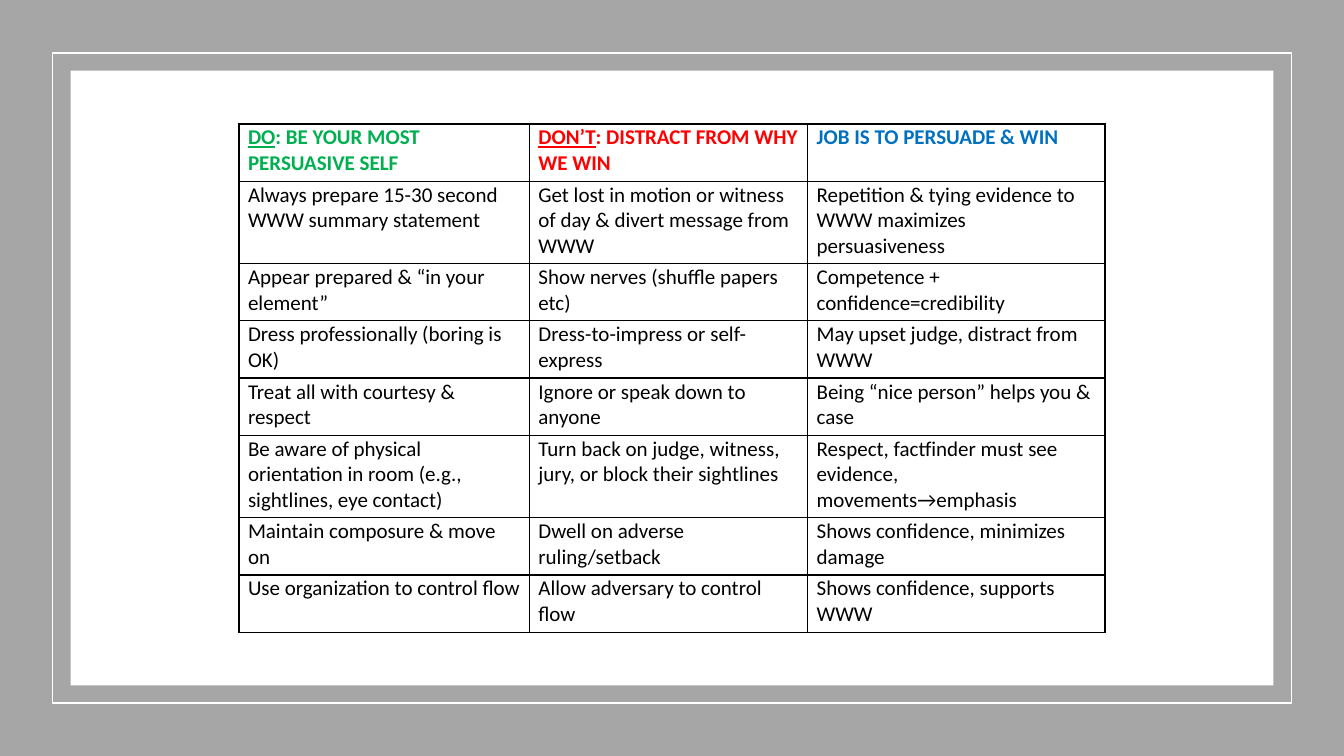
from pptx import Presentation, util as u
from pptx.dml.color import RGBColor
from pptx.enum import shapes, text
from pptx.oxml import parse_xml
from pptx.oxml.ns import nsdecls

W, H = 13.33, 7.5
deck = Presentation()
deck.slide_width, deck.slide_height = u.Inches(W), u.Inches(H)
slide = deck.slides.add_slide(deck.slide_layouts[6])


def paint(part, tone):
    part.solid()
    part.fore_color.rgb = RGBColor.from_string(tone)


def write(para, words, tone="000000", bold=False, under=False):
    run = para.add_run()
    run.text = words
    font = run.font
    font.name, font.size = "Calibri", u.Pt(15)
    font.bold, font.underline = bold, under
    paint(font.fill, tone)


frames = [(0, 0, "A6A6A6", None), (0.52, 0.525, None, "FFFFFF"), (0.7, 0.7, "FFFFFF", None)]
for x, y, fill, line in frames:
    box = slide.shapes.add_shape(
        shapes.MSO_SHAPE.RECTANGLE, u.Inches(x), u.Inches(y),
        u.Inches(W - 2 * x), u.Inches(H - 2 * y))
    box.shadow.inherit = False
    for part, tone in ((box.fill, fill), (box.line.fill, line)):
        if tone:
            paint(part, tone)
        else:
            part.background()
    if line:
        box.line.width = u.Pt(1)

heads = [
    ("DO", ": BE YOUR MOST PERSUASIVE SELF", "00B050"),
    ("DON’T", ": DISTRACT FROM WHY WE WIN", "FF0000"),
    ("", "JOB IS TO PERSUADE & WIN", "0070C0"),
]
tips = [
    ("Always prepare 15-30 second WWW summary statement",
     "Get lost in motion or witness of day & divert message from WWW",
     "Repetition & tying evidence to WWW maximizes persuasiveness"),
    ("Appear prepared & “in your element”",
     "Show nerves (shuffle papers etc)",
     "Competence + confidence=credibility"),
    ("Dress professionally (boring is OK)",
     "Dress-to-impress or self-express",
     "May upset judge, distract from WWW"),
    ("Treat all with courtesy & respect",
     "Ignore or speak down to anyone",
     "Being “nice person” helps you & case"),
    ("Be aware of physical orientation in room (e.g., sightlines, eye contact)",
     "Turn back on judge, witness, jury, or block their sightlines",
     "Respect, factfinder must see evidence, movements→emphasis"),
    ("Maintain composure & move on",
     "Dwell on adverse ruling/setback",
     "Shows confidence, minimizes damage"),
    ("Use organization to control flow",
     "Allow adversary to control flow",
     "Shows confidence, supports WWW"),
]
cols = [2.88, 2.76, 2.95]
short, tall = 0.567, 0.82
rows = [tall if r in (1, 5) else short for r in range(len(tips) + 1)]

grid = slide.shapes.add_table(
    len(rows), len(cols), u.Inches((W - sum(cols)) / 2), u.Inches(1.23),
    u.Inches(sum(cols)), u.Inches(sum(rows))).table
grid.first_row = grid.horz_banding = False
for col, wide in zip(grid.columns, cols):
    col.width = u.Inches(wide)

for r, high in enumerate(rows):
    grid.rows[r].height = u.Inches(high)
    for c in range(len(cols)):
        cell = grid.cell(r, c)
        paint(cell.fill, "FFFFFF")
        cell.margin_left = cell.margin_right = u.Inches(0.09)
        cell.margin_top, cell.margin_bottom = u.Inches(0.01), 0
        cell.vertical_anchor = text.MSO_ANCHOR.TOP
        para = cell.text_frame.paragraphs[0]
        if r:
            write(para, tips[r - 1][c])
        else:
            lead, rest, tone = heads[c]
            if lead:
                write(para, lead, tone=tone, bold=True, under=True)
            write(para, rest, tone=tone, bold=True)
        props = cell._tc.get_or_add_tcPr()
        for i, side in enumerate("LRTB"):
            props.insert(i, parse_xml(
                f'<a:ln{side} {nsdecls("a")} w="{u.Pt(1)}"><a:solidFill>'
                f'<a:srgbClr val="000000"/></a:solidFill></a:ln{side}>'))

deck.save("out.pptx")
